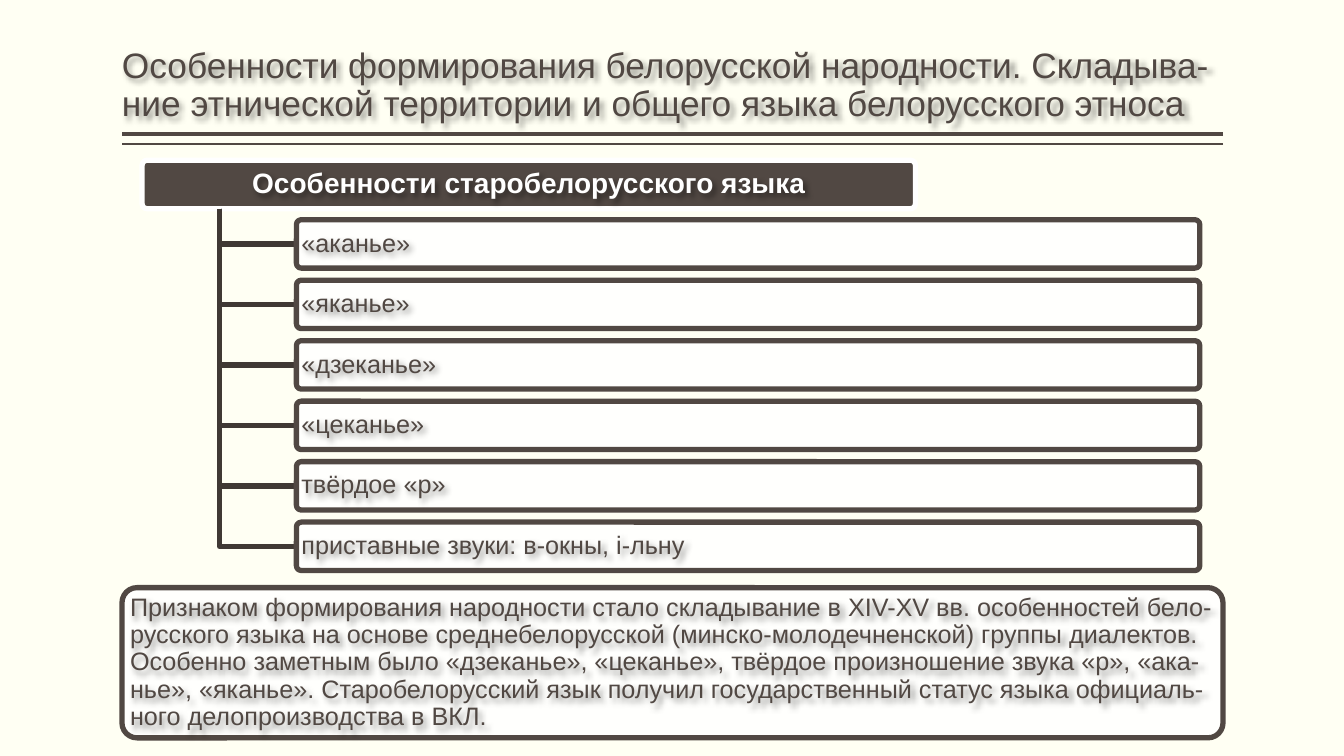
from dataclasses import dataclass

from lxml import etree
from pptx import Presentation
from pptx.dml.color import RGBColor
from pptx.enum.shapes import MSO_CONNECTOR, MSO_SHAPE
from pptx.enum.text import MSO_ANCHOR, MSO_AUTO_SIZE, PP_ALIGN
from pptx.oxml import parse_xml
from pptx.oxml.ns import nsdecls, qn
from pptx.util import Inches, Pt

STRAIGHT = MSO_CONNECTOR.STRAIGHT
ROUNDED = MSO_SHAPE.ROUNDED_RECTANGLE
BOTTOM, MIDDLE = MSO_ANCHOR.BOTTOM, MSO_ANCHOR.MIDDLE
LEFT, CENTER = PP_ALIGN.LEFT, PP_ALIGN.CENTER
NO_FIT = MSO_AUTO_SIZE.NONE


@dataclass(frozen=True)
class Theme:
    paper: RGBColor = RGBColor.from_string("FFFFF3")
    brown: RGBColor = RGBColor.from_string("514843")
    branch: RGBColor = RGBColor.from_string("403934")
    white: RGBColor = RGBColor.from_string("FFFFFF")
    font: str = "Arial"
    title: float = 25.2
    heading: float = 20
    body: float = 18
    border: float = 3.78


theme = Theme()


def write(holder, text, anchor, margins, align, **font):
    frame = holder.text_frame
    side, edge = map(Inches, margins)
    settings = dict(word_wrap=True, auto_size=NO_FIT, vertical_anchor=anchor,
                    margin_left=side, margin_right=side, margin_top=edge, margin_bottom=edge)
    for key, value in settings.items():
        setattr(frame, key, value)
    paragraph = frame.paragraphs[0]
    paragraph.alignment = align
    paragraph.line_spacing = 0.9
    run = paragraph.add_run()
    run.text = text
    color = font.pop("color")
    for key, value in dict(name=theme.font, **font).items():
        setattr(run.font, key, value)
    run.font.color.rgb = color
    holder.fill.background()
    holder._element.spPr.append(parse_xml(
        f'<a:effectLst {nsdecls("a")}><a:outerShdw blurRad="50800" dist="38100" dir="2700000" '
        'algn="tl" rotWithShape="0"><a:srgbClr val="000000"><a:alpha val="40000"/></a:srgbClr>'
        '</a:outerShdw></a:effectLst>'))


def add_panel(box, inset, text, fill, border, opacity, align, **font):
    left, top, width, height = box
    panel = slide.shapes.add_shape(ROUNDED, *map(Inches, box))
    panel.shadow.inherit = False
    panel.adjustments[0] = 0.1
    panel.fill.solid()
    panel.fill.fore_color.rgb = fill
    panel.line.color.rgb = border
    panel.line.width = Pt(theme.border)
    tint = panel._element.spPr.find(qn("a:solidFill"))[0]
    etree.SubElement(tint, qn("a:alpha"), val=str(opacity * 1000))
    inner = (left + inset, top + inset, width - 2 * inset, height - 2 * inset)
    caption = slide.shapes.add_textbox(*map(Inches, inner))
    write(caption, text, MIDDLE, (0.04, 0.02), align, **font)


deck = Presentation()
deck.slide_width, deck.slide_height = Inches(13.33), Inches(7.5)
slide = deck.slides.add_slide(deck.slide_layouts[5])
slide.background.fill.solid()
slide.background.fill.fore_color.rgb = theme.paper

margin, content_width = 1.21, 10.92

for rule_y, rule_weight in ((1.33, 3), (1.43, 1)):
    rule = slide.shapes.add_connector(STRAIGHT, Inches(margin + content_width), Inches(rule_y),
                                      Inches(margin), Inches(rule_y))
    rule.line.color.rgb = theme.brown
    rule.line.width = Pt(rule_weight)
    etree.SubElement(rule._element.spPr, qn("a:effectLst"))

title = slide.shapes.title
title_box = dict(left=margin, top=0.08, width=content_width, height=1.2)
for key, value in title_box.items():
    setattr(title, key, Inches(value))
write(title, "Особенности формирования белорусской народности. Складыва- ние этнической "
      "территории и общего языка белорусского этноса",
      BOTTOM, (0, 0.05), LEFT, size=Pt(theme.title), color=theme.brown)

light = dict(fill=theme.white, border=theme.brown, opacity=90, align=LEFT,
             size=Pt(theme.body), color=theme.brown)

add_panel((margin, 5.83, content_width, 1.49), 0.04,
          "Признаком формирования народности стало складывание в XIV-XV вв. особенностей бело- "
          "русского языка на основе среднебелорусской (минско-молодечненской) группы диалектов. "
          "Особенно заметным было «дзеканье», «цеканье», твёрдое произношение звука «р», «ака- "
          "нье», «яканье». Старобелорусский язык получил государственный статус языка официаль- "
          "ного делопроизводства в ВКЛ.", **light)

row_height, row_pitch = 0.48, 0.6
heading_left, heading_top, heading_width = 1.41, 1.59, 7.67
trunk_x, trunk_top = heading_left + heading_width / 10, heading_top + row_height
feature_left, feature_top, feature_width = 2.94, 2.18, 8.96

add_panel((heading_left, heading_top, heading_width, row_height), 0.01,
          "Особенности старобелорусского языка", theme.brown, theme.white, 100, CENTER,
          size=Pt(theme.heading), bold=True, color=theme.white)

features = ("«аканье»", "«яканье»", "«дзеканье»", "«цеканье»", "твёрдое «р»",
            "приставные звуки: в-окны, і-льну")
for row, feature in enumerate(features):
    top = feature_top + row * row_pitch
    branch_y = Inches(top + row_height / 2)
    outline = slide.shapes.build_freeform(Inches(trunk_x), Inches(trunk_top))
    outline.add_line_segments([(Inches(trunk_x), branch_y), (Inches(feature_left), branch_y)],
                              close=False)
    branch = outline.convert_to_shape()
    branch.shadow.inherit = False
    branch.fill.background()
    branch.line.color.rgb = theme.branch
    branch.line.width = Pt(theme.border)
    add_panel((feature_left, top, feature_width, row_height), 0.01, feature, **light)

deck.save("out.pptx")
